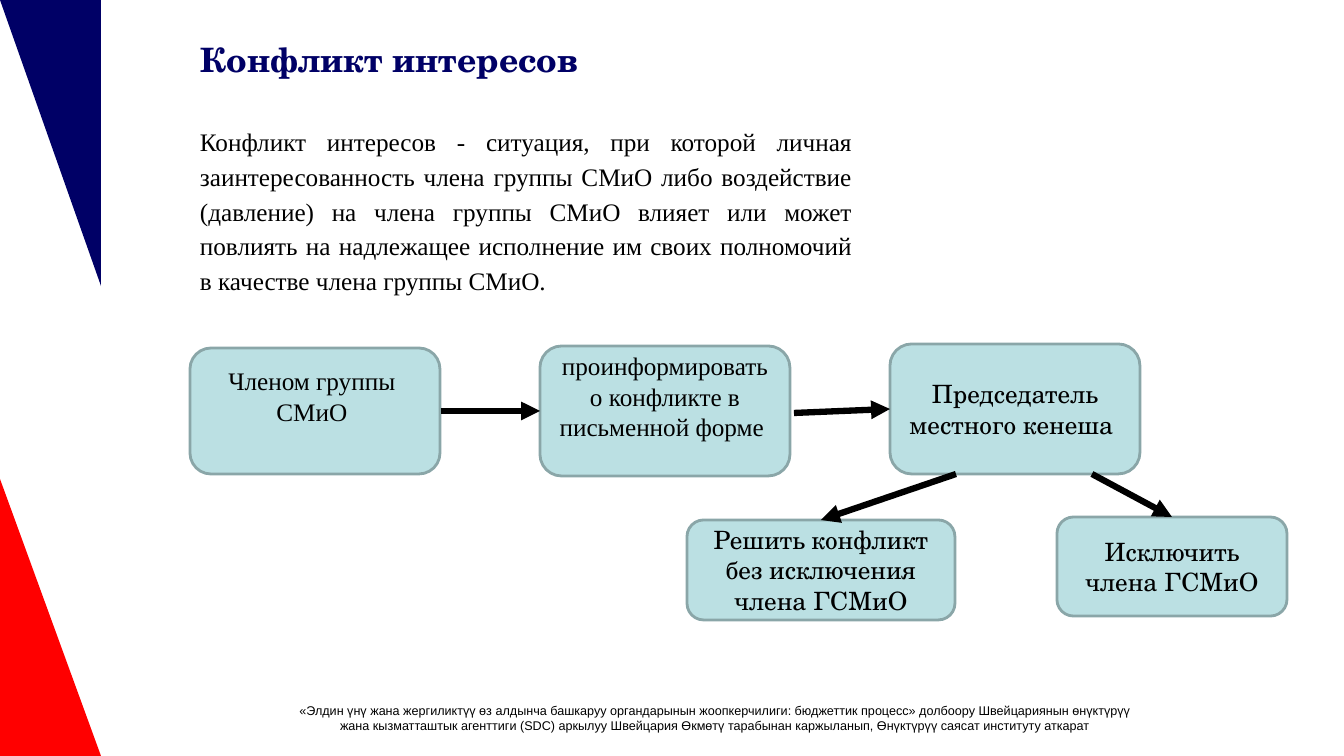
"""Build the conflict of interest slide with its flow of boxes and arrows."""
from dataclasses import dataclass

from lxml import etree
from pptx import Presentation
from pptx.dml.color import RGBColor
from pptx.enum.shapes import MSO_CONNECTOR, MSO_SHAPE
from pptx.enum.text import MSO_ANCHOR, PP_ALIGN
from pptx.oxml.ns import qn
from pptx.util import Pt

ROUND = MSO_SHAPE.ROUNDED_RECTANGLE
WEDGE = MSO_SHAPE.RIGHT_TRIANGLE
LINE = MSO_CONNECTOR.STRAIGHT
MIDDLE, TOP = MSO_ANCHOR.MIDDLE, MSO_ANCHOR.TOP
LEFT, CENTER, JUSTIFY = PP_ALIGN.LEFT, PP_ALIGN.CENTER, PP_ALIGN.JUSTIFY


@dataclass(frozen=True)
class Theme:
    navy: str = "000066"
    red: str = "FF0000"
    fill: str = "BBE0E3"
    edge: str = "8AA6A8"
    ink: str = "000000"
    head: str = "TeX Gyre Schola"
    body: str = "Times New Roman"
    foot: str = "Arial"
    big: int = 24
    mid: int = 18
    small: int = 9


THEME = Theme()
PX = 914400 / 100.8
SIZE = (1344, 756)
PAD, LIFT = 5, 35

TITLE = ("Конфликт интересов", (190, 25, 1109, 68))
BODY = (
    "Конфликт интересов - ситуация, при которой личная заинтересованность "
    "члена группы СМиО либо воздействие (давление) на члена группы СМиО "
    "влияет или может повлиять на надлежащее исполнение им своих полномочий "
    "в качестве члена группы СМиО.",
    (190, 117, 672, 185),
)
FOOT = (
    [
        "«Элдин үнү жана жергиликтүү өз алдынча башкаруу органдарынын "
        "жоопкерчилиги: бюджеттик процесс» долбоору Швейцариянын ѳнүктүрүү",
        "жана кызматташтык агенттиги (SDC) аркылуу Швейцария Өкмөтү тарабынан "
        "каржыланып, Өнүктүрүү саясат институту аткарат",
    ],
    (122, 693, 1185, 50),
)
WEDGES = [
    ((0, 479, 101, 277), 0, THEME.red),
    ((0, 0, 101, 286), 180, THEME.navy),
]
BOXES = {
    "member": (["Членом группы ", "СМиО "], (190, 348, 250, 126), THEME.body, LIFT),
    "inform": (["проинформировать о конфликте в письменной форме "],
               (540, 346, 250, 130), THEME.body, LIFT),
    "chair": (["Председатель местного кенеша "],
              (890, 344, 250, 130), THEME.head, PAD),
    "expel": (["Исключить члена ГСМиО"],
              (1057, 517, 230, 99), THEME.head, PAD),
    "solve": (["Решить конфликт без исключения члена ГСМиО"],
              (687, 520, 268, 100), THEME.head, PAD),
}
TOP_SITE, LEFT_SITE = 0, 1
ARROWS = [
    ((441, 411), "inform", LEFT_SITE),
    ((794, 413), "chair", LEFT_SITE),
    ((956, 474), "solve", TOP_SITE),
    ((1092, 474), "expel", TOP_SITE),
]


def emu(*nums):
    return [round(num * PX) for num in nums]


def color(code):
    return RGBColor.from_string(code)


def write(frame, lines, font, size, align, ink=THEME.ink, bold=False,
          anchor=MIDDLE, space=1.0):
    frame.word_wrap = True
    frame.vertical_anchor = anchor
    for num, text in enumerate(lines):
        para = frame.add_paragraph() if num else frame.paragraphs[0]
        para.alignment = align
        para.line_spacing = space
        run = para.add_run()
        run.text = text
        run.font.name = font
        run.font.size = Pt(size)
        run.font.bold = bold
        run.font.color.rgb = color(ink)


def add_wedge(slide, area, turn, tone):
    shape = slide.shapes.add_shape(WEDGE, *emu(*area))
    shape.shadow.inherit = False
    shape.rotation = turn
    shape.fill.solid()
    shape.fill.fore_color.rgb = color(tone)
    shape.line.fill.background()


def add_box(slide, lines, area, font, base):
    shape = slide.shapes.add_shape(ROUND, *emu(*area))
    shape.shadow.inherit = False
    shape.fill.solid()
    shape.fill.fore_color.rgb = color(THEME.fill)
    shape.line.color.rgb = color(THEME.edge)
    shape.line.width = Pt(2)
    shape.text_frame.margin_bottom = emu(base)[0]
    write(shape.text_frame, lines, font, THEME.mid, CENTER)
    return shape


def add_arrow(slide, start, box, site):
    arrow = slide.shapes.add_connector(LINE, *emu(*start, *start))
    arrow.end_connect(box, site)
    arrow.line.color.rgb = color(THEME.ink)
    arrow.line.width = Pt(4.5)
    props = arrow.line.color and arrow.element.spPr
    etree.SubElement(props.find(qn("a:ln")), qn("a:tailEnd"), type="triangle")
    etree.SubElement(props, qn("a:effectLst"))


def main():
    deck = Presentation()
    deck.slide_width, deck.slide_height = emu(*SIZE)
    slide = deck.slides.add_slide(deck.slide_layouts[5])

    for wedge in WEDGES:
        add_wedge(slide, *wedge)

    text, area = TITLE
    title = slide.shapes.title
    title.left, title.top, title.width, title.height = emu(*area)
    write(title.text_frame, [text], THEME.head, THEME.big, LEFT,
          THEME.navy, True)

    text, area = BODY
    note = slide.shapes.add_textbox(*emu(*area))
    write(note.text_frame, [text], THEME.body, THEME.mid, JUSTIFY,
          anchor=TOP, space=1.15)

    lines, area = FOOT
    foot = slide.shapes.add_textbox(*emu(*area))
    write(foot.text_frame, lines, THEME.foot, THEME.small, CENTER)

    boxes = {name: add_box(slide, *data) for name, data in BOXES.items()}
    for start, name, site in ARROWS:
        add_arrow(slide, start, boxes[name], site)

    deck.save("out.pptx")


if __name__ == "__main__":
    main()
